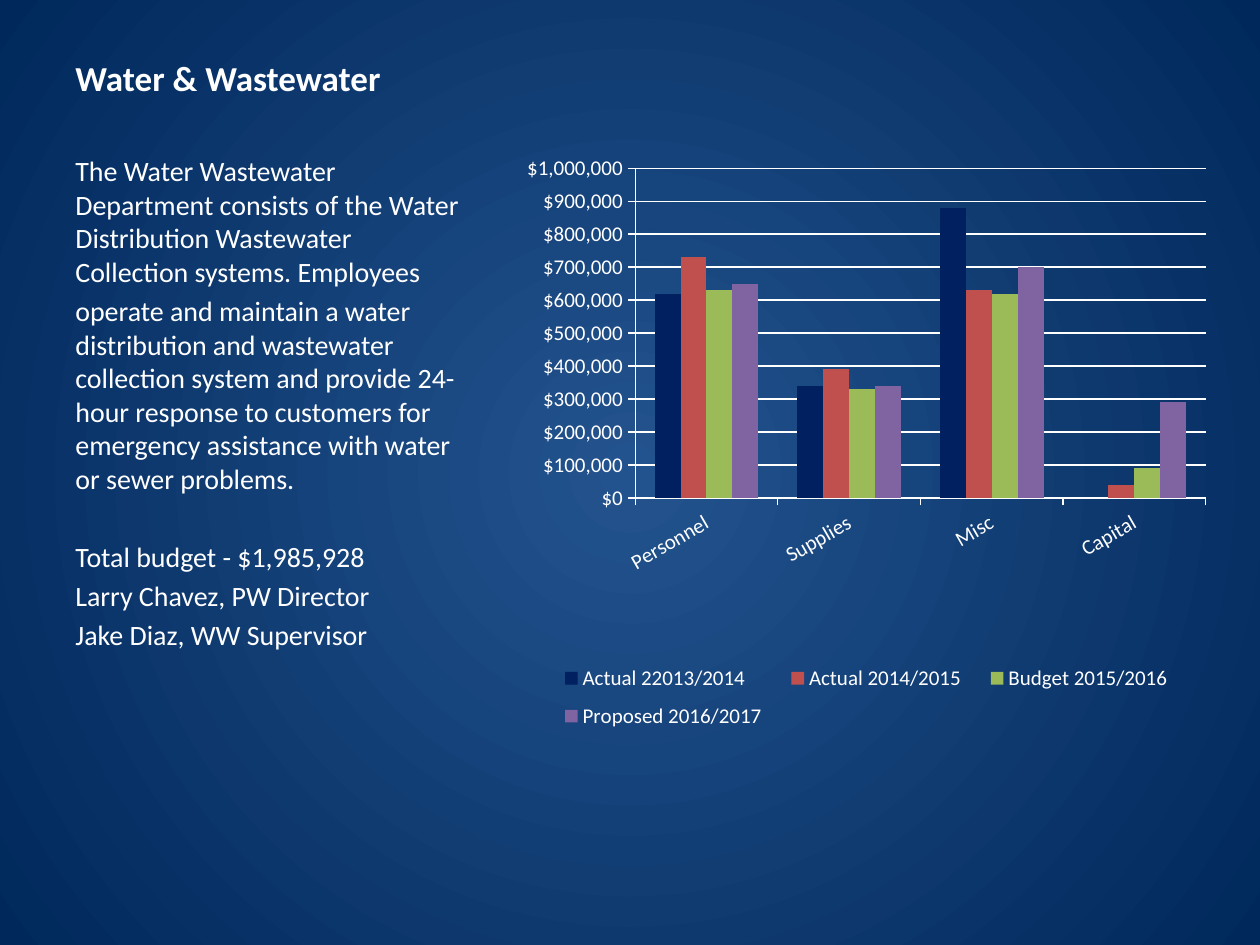
from lxml import etree
from pptx import Presentation
from pptx import util as u
from pptx.chart.data import CategoryChartData
from pptx.dml.color import RGBColor
from pptx.enum import chart as ch, text
from pptx.oxml import parse_xml
from pptx.oxml.ns import nsdecls, qn

COLORS = {"white": "FFFFFF", "center": "23538E", "edge": "00285B"}
FONT = "Calibri"


def style_font(font, size, bold=False):
    font.name, font.size, font.bold = FONT, u.Pt(size), bold
    font.color.rgb = RGBColor.from_string(COLORS["white"])


def manual_layout(x, y, w, h, inner=False):
    layout = etree.Element(qn("c:layout"))
    manual = etree.SubElement(layout, qn("c:manualLayout"))
    settings = [("layoutTarget", "inner")] if inner else []
    settings += [("xMode", "edge"), ("yMode", "edge"),
                 ("x", x), ("y", y), ("w", w), ("h", h)]
    for tag, value in settings:
        etree.SubElement(manual, qn("c:" + tag)).set("val", str(value))
    return layout


prs = Presentation()
prs.slide_width, prs.slide_height = u.Inches(10), u.Inches(7.5)
s = prs.slides.add_slide(prs.slide_layouts[6])

# Background: radial gradient
s.background.fill.solid()
bg_pr = s.background._cSld.bg.bgPr
bg_pr.replace(bg_pr[0], parse_xml(
    f'<a:gradFill {nsdecls("a")} rotWithShape="1"><a:gsLst>'
    f'<a:gs pos="0"><a:srgbClr val="{COLORS["center"]}"/></a:gs>'
    f'<a:gs pos="100000"><a:srgbClr val="{COLORS["edge"]}"/></a:gs></a:gsLst>'
    '<a:path path="circle"><a:fillToRect l="50000" t="50000" r="50000" b="50000"/>'
    '</a:path></a:gradFill>'))

# Title and description: (top, height, anchor, size, bold, [(text, space before)])
blocks = [
    (0.3, 0.53, text.MSO_ANCHOR.BOTTOM, 20, True, [("Water & Wastewater", 0)]),
    (1.17, 5.53, text.MSO_ANCHOR.TOP, 16, False, [
        ("The Water Wastewater Department consists of the Water Distribution "
         "Wastewater Collection systems. Employees", 3.2),
        ("operate and maintain a water distribution and wastewater collection "
         "system and provide 24-hour response to customers for emergency "
         "assistance with water or sewer problems.", 3.2),
        ("Total budget - $1,985,928", 25.2),
        ("Larry Chavez, PW Director", 3.2),
        ("Jake Diaz, WW Supervisor", 3.2),
    ]),
]
for top, height, anchor, size, bold, paragraphs in blocks:
    sp = s.shapes.add_textbox(u.Inches(0.5), u.Inches(top),
                              u.Inches(3.29), u.Inches(height))
    tf = sp.text_frame
    tf.word_wrap, tf.vertical_anchor = True, anchor
    for i, (words, before) in enumerate(paragraphs):
        p = tf.add_paragraph() if i else tf.paragraphs[0]
        p.text, p.space_before = words, u.Pt(before)
        style_font(p.font, size, bold)

# Budget chart
series = [
    ("Actual 22013/2014", "002060", (620000, 340000, 880000, -70000)),
    ("Actual 2014/2015", "C0504D", (730000, 390000, 630000, 40000)),
    ("Budget 2015/2016", "9BBB59", (630000, 330000, 620000, 90000)),
    ("Proposed 2016/2017", "8064A2", (650000, 340000, 700000, 290000)),
]
data = CategoryChartData()
data.categories = ["Personnel", "Supplies", "Misc", "Capital"]
for name, color, values in series:
    data.add_series(name, values)
chart = s.shapes.add_chart(
    ch.XL_CHART_TYPE.COLUMN_CLUSTERED, u.Inches(4.08), u.Inches(0.83),
    u.Inches(5.59), u.Inches(6.4), data).chart
chart.has_title = False
style_font(chart.font, 18)
plot = chart.plots[0]
plot.gap_width, plot.overlap, plot.vary_by_categories = 150, 0, False
for ser, (name, color, values) in zip(plot.series, series):
    ser.invert_if_negative = False
    ser.format.fill.solid()
    ser.format.fill.fore_color.rgb = RGBColor.from_string(color)

# Axes
cat, val = chart.category_axis, chart.value_axis
val.minimum_scale, val.maximum_scale, val.major_unit = 0, 1000000, 100000
val.has_major_gridlines = True
val.tick_labels.number_format = '"$"#,##0'
val.tick_labels.number_format_is_linked = False
for axis in (cat, val):
    axis.major_tick_mark = ch.XL_TICK_MARK.OUTSIDE
    style_font(axis.tick_labels.font, 12)
for line in (cat.format.line, val.format.line, val.major_gridlines.format.line):
    line.color.rgb = RGBColor.from_string(COLORS["white"])
    line.width = u.Pt(0.75)
cat._element.find(qn("c:txPr")).find(qn("a:bodyPr")).set("rot", "-1800000")

# Legend and plot placement
chart.has_legend = True
legend = chart.legend
legend.position = ch.XL_LEGEND_POSITION.BOTTOM
legend.include_in_layout = False
style_font(legend.font, 12)
legend._element.find(qn("c:legendPos")).addnext(manual_layout(0.04, 0.68, 0.92, 0.11))
plot_area = chart._chartSpace.chart.plotArea
for old in plot_area.findall(qn("c:layout")):
    plot_area.remove(old)
plot_area.insert(0, manual_layout(0.172, 0.079, 0.81, 0.409, inner=True))

prs.save("out.pptx")
